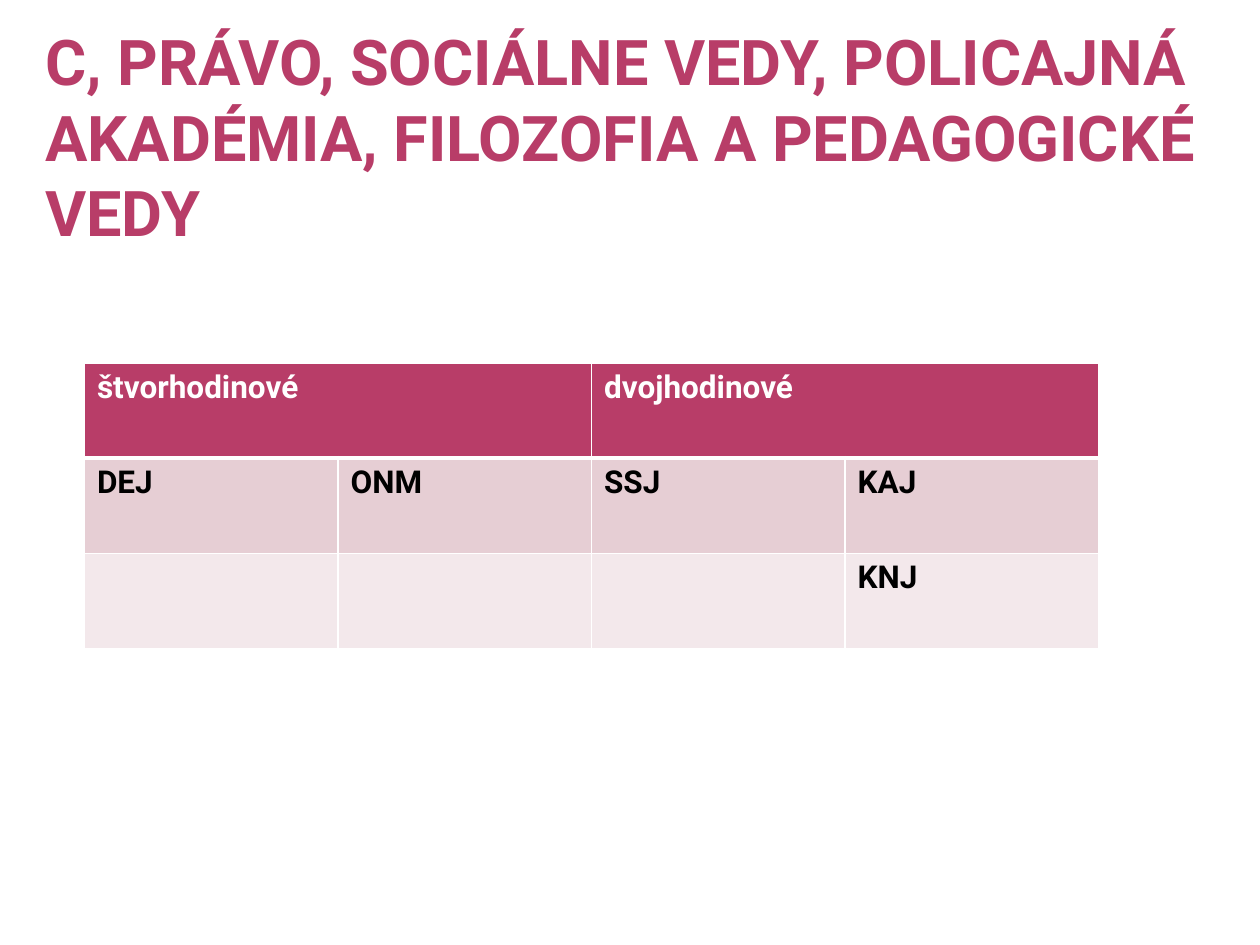
from lxml.etree import SubElement
from pptx import Presentation
from pptx.dml.color import RGBColor
from pptx.enum.text import MSO_ANCHOR, MSO_AUTO_SIZE, PP_ALIGN
from pptx.oxml.ns import qn
from pptx.util import Inches, Pt

FONT = "Roboto"
COLORS = {
    "accent": "B83D68",
    "band_dark": "E6CED4",
    "band_light": "F3E8EB",
    "white": "FFFFFF",
    "black": "000000",
}
TITLE = "C, PRÁVO, SOCIÁLNE VEDY, POLICAJNÁ AKADÉMIA, FILOZOFIA A PEDAGOGICKÉ VEDY"
ROWS = [
    ["štvorhodinové", "", "dvojhodinové", ""],
    ["DEJ", "ONM", "SSJ", "KAJ"],
    ["", "", "", "KNJ"],
]
ROW_STYLES = [("accent", "white"), ("band_dark", "black"), ("band_light", "black")]


def add_run(paragraph, text, size, color):
    """Add one bold run in the slide font."""
    run = paragraph.add_run()
    run.text = text
    run.font.name = FONT
    run.font.size = Pt(size)
    run.font.bold = True
    run.font.color.rgb = RGBColor.from_string(COLORS[color])


def set_title(slide):
    """Place the title placeholder and fill it."""
    title = slide.shapes.title
    title.left, title.top = Inches(0.31), Inches(1.02)
    title.width, title.height = Inches(9.45), Inches(0.96)
    frame = title.text_frame
    frame.word_wrap = True
    frame.auto_size = MSO_AUTO_SIZE.NONE
    frame.vertical_anchor = MSO_ANCHOR.BOTTOM
    frame.margin_left = frame.margin_right = Inches(0.05)
    frame.margin_top = frame.margin_bottom = 0
    paragraph = frame.paragraphs[0]
    paragraph.alignment = PP_ALIGN.LEFT
    add_run(paragraph, TITLE, 36, "accent")


def set_borders(cell, bottom_width):
    """Draw white cell borders with a chosen bottom width."""
    properties = cell._tc.get_or_add_tcPr()
    widths = {"a:lnL": 1, "a:lnR": 1, "a:lnT": 1, "a:lnB": bottom_width}
    for position, (tag, width) in enumerate(widths.items()):
        line = SubElement(properties, qn(tag), w=str(Pt(width)))
        fill = SubElement(line, qn("a:solidFill"))
        SubElement(fill, qn("a:srgbClr"), val=COLORS["white"])
        properties.insert(position, line)


def add_subject_table(slide):
    """Add the table of subjects by weekly hours."""
    frame = slide.shapes.add_table(
        len(ROWS), len(ROWS[0]), Inches(0.67), Inches(2.88), Inches(8.05), Inches(2.27)
    )
    table = frame.table
    for row_index, (texts, (fill, color)) in enumerate(zip(ROWS, ROW_STYLES)):
        for column_index, text in enumerate(texts):
            cell = table.cell(row_index, column_index)
            cell.fill.solid()
            cell.fill.fore_color.rgb = RGBColor.from_string(COLORS[fill])
            set_borders(cell, 3 if row_index == 0 else 1)
            if text:
                add_run(cell.text_frame.paragraphs[0], text, 18, color)
    for start in (0, 2):
        table.cell(0, start).merge(table.cell(0, start + 1))


def main():
    """Build and save the slide."""
    presentation = Presentation()
    presentation.slide_width, presentation.slide_height = Inches(10), Inches(7.5)
    slide = presentation.slides.add_slide(presentation.slide_layouts[5])
    set_title(slide)
    add_subject_table(slide)
    presentation.save("out.pptx")


if __name__ == "__main__":
    main()
